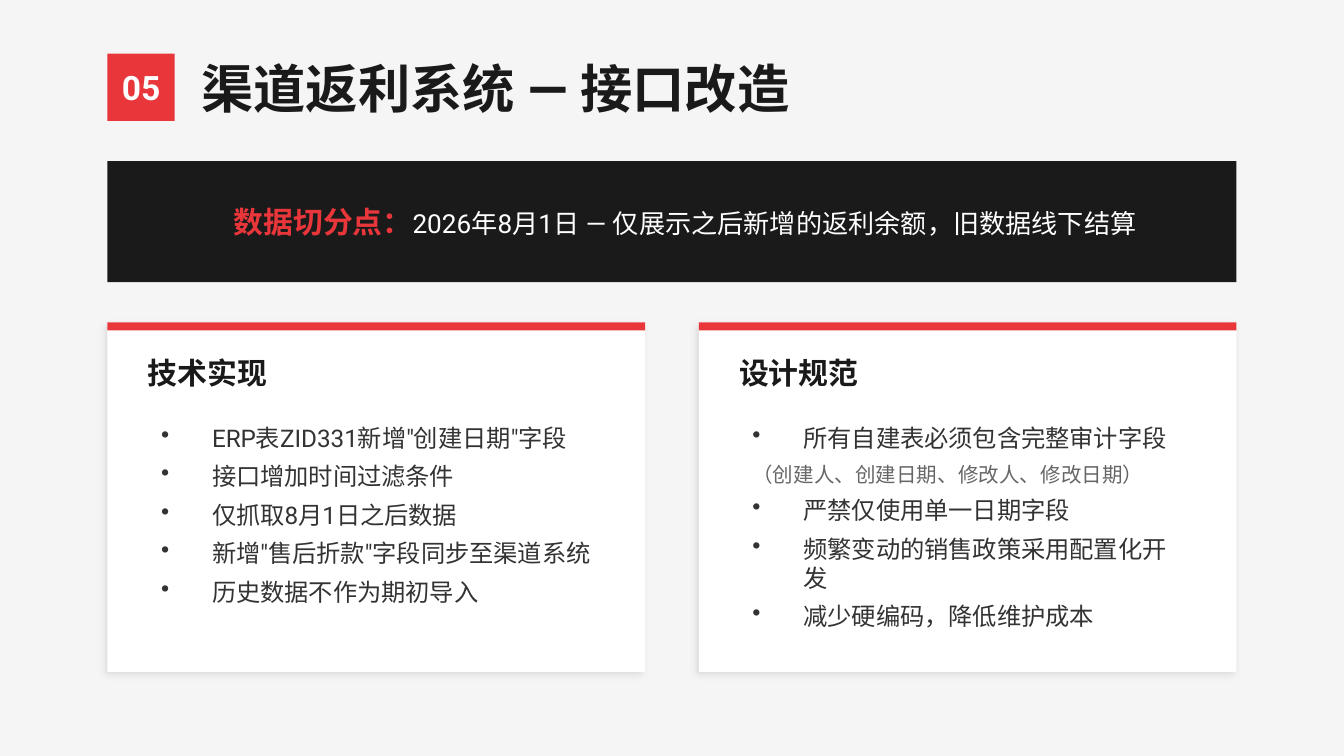
"""Build the slide on interface changes in the channel rebate system."""
from dataclasses import dataclass

from lxml import etree
from pptx import Presentation
from pptx.dml import color
from pptx.enum import lang, shapes, text
from pptx.oxml import ns
from pptx.util import Pt

COLORS = {
    "paper": "F5F5F5",
    "red": "E8363B",
    "ink": "1A1A1A",
    "white": "FFFFFF",
    "body": "333333",
    "muted": "666666",
    "black": "000000",
}
FONT = "Roboto"
MARGIN = 57.6
HANGING = 27.36
CARD_TOP, CARD_WIDTH, CARD_HEIGHT, CARD_STEP = 172.8, 288, 187.2, 316.8
CARD_PADDING, CARD_TEXT_WIDTH = 21.6, 244.8


@dataclass(frozen=True)
class Point:
    wording: str
    is_note: bool = False


@dataclass(frozen=True)
class Card:
    heading: str
    points: tuple[Point, ...]


CARDS = (
    Card("技术实现", (
        Point('ERP表ZID331新增"创建日期"字段'),
        Point("接口增加时间过滤条件"),
        Point("仅抓取8月1日之后数据"),
        Point('新增"售后折款"字段同步至渠道系统'),
        Point("历史数据不作为期初导入"),
    )),
    Card("设计规范", (
        Point("所有自建表必须包含完整审计字段"),
        Point("（创建人、创建日期、修改人、修改日期）", is_note=True),
        Point("严禁仅使用单一日期字段"),
        Point("频繁变动的销售政策采用配置化开发"),
        Point("减少硬编码，降低维护成本"),
    )),
)


def rgb(name: str) -> color.RGBColor:
    return color.RGBColor.from_string(COLORS[name])


def place(item, left: float, top: float, width: float, height: float) -> None:
    item.left, item.top, item.width, item.height = map(Pt, (left, top, width, height))


def write(paragraph, wording: str, *, size: float, ink: str, bold: bool = False) -> None:
    run = paragraph.add_run()
    run.text = wording
    font = run.font
    font.size, font.bold, font.name = Pt(size), bold, FONT
    font.color.rgb = rgb(ink)
    font.language_id = lang.MSO_LANGUAGE_ID.ENGLISH_US
    east_asian = etree.SubElement(run._r.get_or_add_rPr(), ns.qn("a:ea"))
    east_asian.set("typeface", FONT)


def prepare_line(frame, *, centered: bool = False):
    frame.word_wrap = True
    frame.auto_size = text.MSO_AUTO_SIZE.NONE
    frame.vertical_anchor = text.MSO_ANCHOR.MIDDLE
    frame.margin_left = frame.margin_right = frame.margin_top = frame.margin_bottom = 0
    paragraph = frame.paragraphs[0]
    paragraph.alignment = text.PP_ALIGN.CENTER if centered else text.PP_ALIGN.LEFT
    return paragraph


def add_line(slide, left: float, top: float, width: float, height: float,
             *, centered: bool = False):
    box = slide.shapes.add_textbox(Pt(left), Pt(top), Pt(width), Pt(height))
    return prepare_line(box.text_frame, centered=centered)


def add_block(slide, left: float, top: float, width: float, height: float, fill: str):
    block = slide.shapes.add_shape(
        shapes.MSO_SHAPE.RECTANGLE, Pt(left), Pt(top), Pt(width), Pt(height))
    block.shadow.inherit = False
    block.fill.solid()
    block.fill.fore_color.rgb = rgb(fill)
    block.line.fill.background()
    return block


def cast_shadow(block) -> None:
    effects = block._element.spPr.find(ns.qn("a:effectLst"))
    shadow = etree.SubElement(effects, ns.qn("a:outerShdw"), blurRad=str(Pt(4)),
                              dist=str(Pt(2)), dir=str(135 * 60000),
                              algn="bl", rotWithShape="0")
    tint = etree.SubElement(shadow, ns.qn("a:srgbClr"), val=COLORS["black"])
    etree.SubElement(tint, ns.qn("a:alpha"), val="10000")


def add_point(paragraph, point: Point) -> None:
    indent = 0 if point.is_note else HANGING
    properties = paragraph._p.get_or_add_pPr()
    properties.set("marL", str(Pt(indent)))
    properties.set("indent", str(Pt(-indent)))
    if point.is_note:
        paragraph.level = 1
        etree.SubElement(properties, ns.qn("a:buNone"))
        size, ink = 11, "muted"
    else:
        etree.SubElement(properties, ns.qn("a:buChar"), char="•")
        size, ink = 13, "body"
    paragraph.space_after = Pt(5)
    write(paragraph, point.wording, size=size, ink=ink)


def add_card(slide, left: float, card: Card) -> None:
    cast_shadow(add_block(slide, left, CARD_TOP, CARD_WIDTH, CARD_HEIGHT, "white"))
    add_block(slide, left, CARD_TOP, CARD_WIDTH, 4.32, "red")
    inner = left + CARD_PADDING
    heading = add_line(slide, inner, CARD_TOP + 14.4, CARD_TEXT_WIDTH, 25.2)
    write(heading, card.heading, size=16, ink="ink", bold=True)
    points_box = slide.shapes.add_textbox(
        Pt(inner), Pt(CARD_TOP + 50.4), Pt(CARD_TEXT_WIDTH), Pt(122.4))
    frame = points_box.text_frame
    frame.word_wrap = True
    for index, point in enumerate(card.points):
        add_point(frame.add_paragraph() if index else frame.paragraphs[0], point)


def main() -> None:
    deck = Presentation()
    deck.slide_width, deck.slide_height = Pt(720), Pt(405)
    slide = deck.slides.add_slide(deck.slide_layouts[5])
    slide.background.fill.solid()
    slide.background.fill.fore_color.rgb = rgb("paper")

    add_block(slide, MARGIN, 28.8, 36, 36, "red")
    section_number = add_line(slide, MARGIN, 28.8, 36, 36, centered=True)
    write(section_number, "05", size=18, ink="white", bold=True)

    title = slide.shapes.title
    place(title, 108, 28.8, 504, 36)
    write(prepare_line(title.text_frame), "渠道返利系统 — 接口改造",
          size=28, ink="ink", bold=True)

    add_block(slide, MARGIN, 86.4, 604.8, 64.8, "ink")
    cutoff = add_line(slide, 86.4, 86.4, 561.6, 64.8, centered=True)
    write(cutoff, "数据切分点：", size=16, ink="red", bold=True)
    write(cutoff, "2026年8月1日 — 仅展示之后新增的返利余额，旧数据线下结算",
          size=14, ink="white")

    for column, card in enumerate(CARDS):
        add_card(slide, MARGIN + column * CARD_STEP, card)
    deck.save("out.pptx")


if __name__ == "__main__":
    main()
